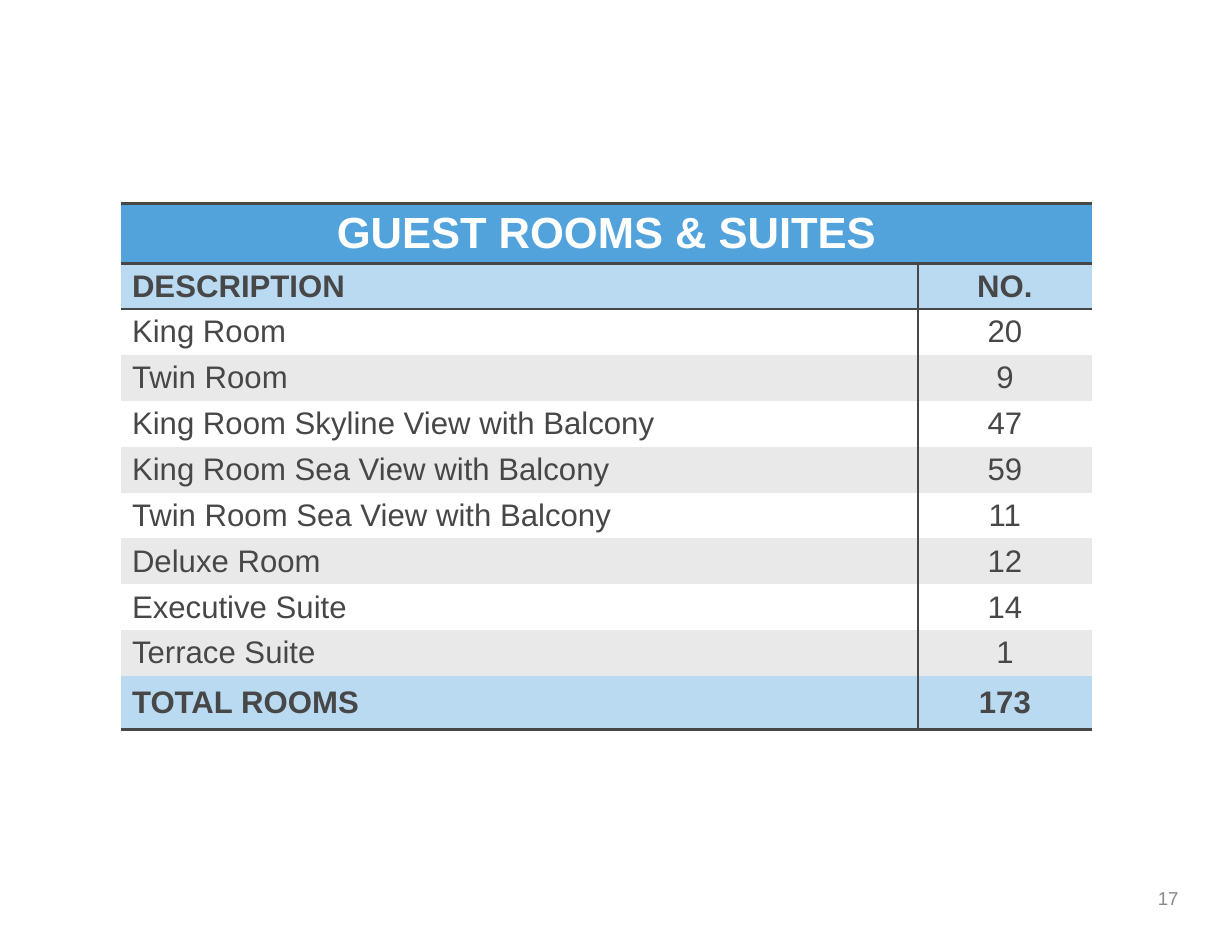
from dataclasses import dataclass

from lxml import etree
from pptx import Presentation
from pptx.dml.color import RGBColor
from pptx.enum.text import MSO_ANCHOR, PP_ALIGN
from pptx.oxml.ns import qn
from pptx.util import Cm, Pt

LEFT, CENTER, RIGHT = PP_ALIGN.LEFT, PP_ALIGN.CENTER, PP_ALIGN.RIGHT
MIDDLE = MSO_ANCHOR.MIDDLE
NO_GRID = "{2D5ABB26-0587-4C30-8999-92F81FD0307C}"

ROOMS = [
    ("King Room", 20),
    ("Twin Room", 9),
    ("King Room Skyline View with Balcony", 47),
    ("King Room Sea View with Balcony", 59),
    ("Twin Room Sea View with Balcony", 11),
    ("Deluxe Room", 12),
    ("Executive Suite", 14),
    ("Terrace Suite", 1),
]


@dataclass(frozen=True)
class Theme:
    """Colours, font and type sizes of the slide."""
    font: str = "Arial"
    ink: str = "474747"
    white: str = "FFFFFF"
    title_fill: str = "52A3DC"
    accent_fill: str = "BADAF1"
    band_fill: str = "E9E9E9"
    muted: str = "898989"
    title_size: int = 28
    body_size: int = 20
    number_size: int = 12
    rule: float = 2
    divider: float = 1


class Deck:
    """Draws styled elements on the current slide."""

    def __init__(self, prs, theme):
        self.theme = theme
        self.s = prs.slides.add_slide(prs.slide_layouts[6])

    def put_text(self, tf, text, size, color, bold=False, align=LEFT):
        """Fill a text frame with one formatted paragraph."""
        p = tf.paragraphs[0]
        p.alignment = align
        r = p.add_run()
        r.text = str(text)
        style = {"name": self.theme.font, "size": Pt(size), "bold": bold}
        for key, value in style.items():
            setattr(r.font, key, value)
        r.font.color.rgb = RGBColor.from_string(color)

    def text(self, text, x, y, w, h, **style):
        """Add a text box."""
        tf = self.s.shapes.add_textbox(Cm(x), Cm(y), Cm(w), Cm(h)).text_frame
        tf.word_wrap = True
        tf.vertical_anchor = MIDDLE
        self.put_text(tf, text, **style)

    def table(self, x, y, widths, heights):
        """Add a table without a grid."""
        sp = self.s.shapes.add_table(len(heights), len(widths), Cm(x), Cm(y),
                                     Cm(sum(widths)), Cm(sum(heights)))
        table = sp.table
        table._tbl.tblPr.find(qn("a:tableStyleId")).text = NO_GRID
        for column, width in zip(table.columns, widths):
            column.width = Cm(width)
        for row, height in zip(table.rows, heights):
            row.height = Cm(height)
        return table

    def cell(self, cell, fill, borders):
        """Set margins, borders and fill of a table cell."""
        layout = {"margin_top": Cm(0.08), "margin_bottom": Cm(0.08), "vertical_anchor": MIDDLE}
        for key, value in layout.items():
            setattr(cell, key, value)
        tc_pr = cell._tc.get_or_add_tcPr()
        for side in "LRTB":
            if side in borders:
                ln = etree.SubElement(tc_pr, qn(f"a:ln{side}"), w=str(Pt(borders[side])))
                solid = etree.SubElement(ln, qn("a:solidFill"))
                etree.SubElement(solid, qn("a:srgbClr"), val=self.theme.ink)
        cell.fill.solid()
        cell.fill.fore_color.rgb = RGBColor.from_string(fill)

    def room_table(self, title, header, rooms, total_label):
        """Add the room schedule with its title, header and total rows."""
        t = self.theme
        total = sum(count for _, count in rooms)
        rows = [header, *rooms, (total_label, total)]
        last = len(rows)
        heights = [1.35] + [1.04] * (last - 1) + [1.22]
        table = self.table(2.74, 4.62, [17.04, 1.04, 3.94], heights)

        for cell in table.rows[0].cells:
            self.cell(cell, t.title_fill, {"T": t.rule, "B": t.rule})
        table.cell(0, 0).merge(table.cell(0, 2))
        self.put_text(table.cell(0, 0).text_frame, title, t.title_size, t.white, True, CENTER)

        for i, (label, count) in enumerate(rows, 1):
            strong = i in (1, last)
            fill = t.accent_fill if strong else (t.white, t.band_fill)[i % 2]
            edges = {"T": t.rule} if i == 1 else {"B": t.rule} if i == last else {}
            for j, divider in enumerate(({}, {"R": t.divider}, {"L": t.divider})):
                self.cell(table.cell(i, j), fill, {**edges, **divider})
            for j, value, align in ((0, label, LEFT), (2, count, CENTER)):
                self.put_text(table.cell(i, j).text_frame, value, t.body_size, t.ink, strong, align)


def main():
    prs = Presentation()
    prs.slide_width, prs.slide_height = Cm(27.94), Cm(21.59)
    theme = Theme()
    deck = Deck(prs, theme)
    deck.room_table("GUEST ROOMS & SUITES", ("DESCRIPTION", "NO."), ROOMS, "TOTAL ROOMS")
    deck.text("17", 20.45, 19.79, 6.53, 1.14,
              size=theme.number_size, color=theme.muted, align=RIGHT)
    prs.save("out.pptx")


if __name__ == "__main__":
    main()
